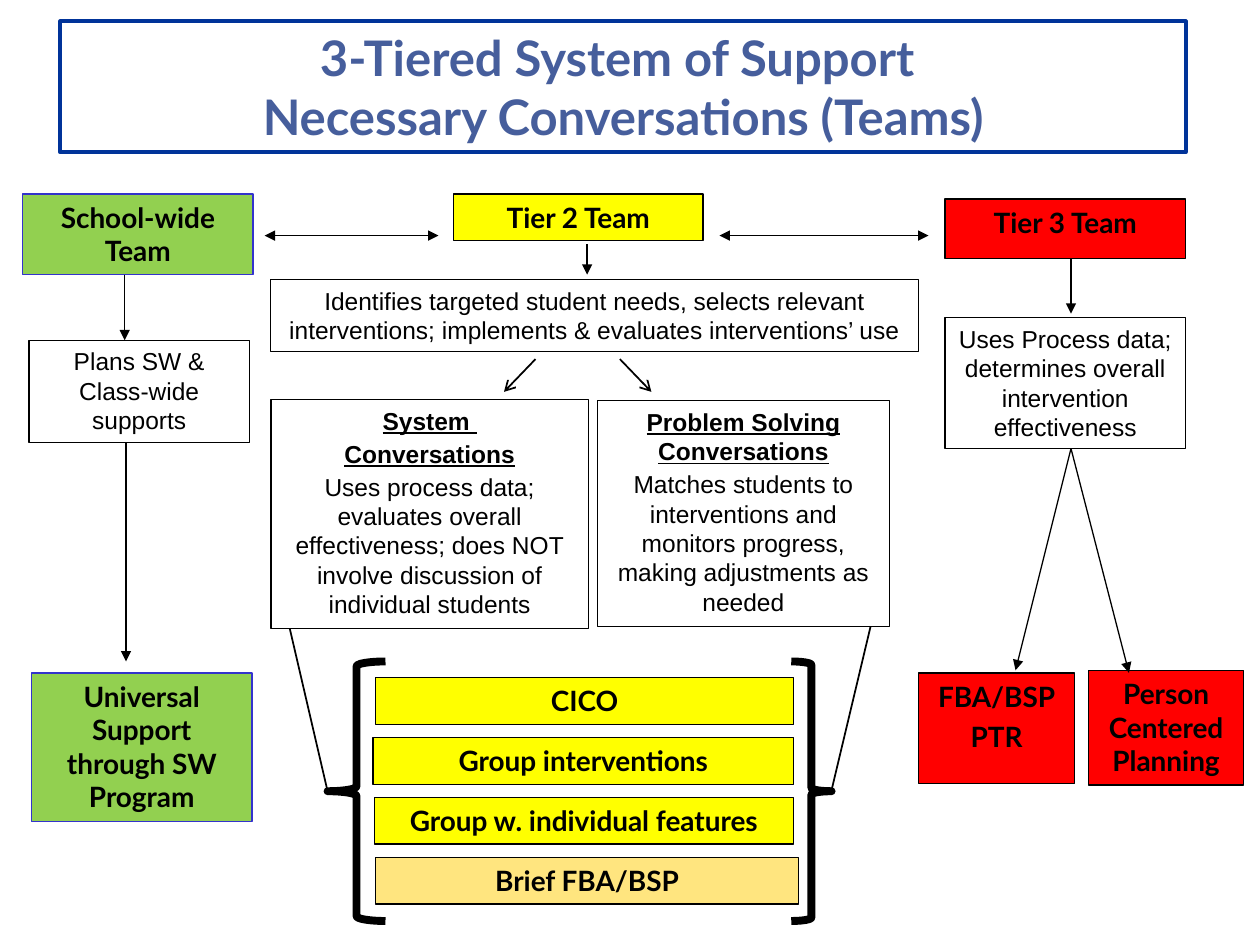
from lxml.etree import SubElement
from pptx import Presentation
from pptx.dml.color import RGBColor
from pptx.enum.shapes import MSO_CONNECTOR as LINK, MSO_SHAPE as SHAPE
from pptx.enum.text import MSO_ANCHOR as ANCHOR, PP_ALIGN as ALIGN
from pptx.oxml.ns import qn
from pptx.util import Inches, Pt

COLORS = {
    "white": "FFFFFF", "black": "000000", "navy": "003399", "title": "465E9C",
    "green": "92D050", "blue": "3333CC", "yellow": "FFFF00", "red": "FF0000",
    "gold": "FFCC00",
}
HEADING = {"name": "Lato", "size": Pt(16), "bold": True}
TITLE = {"name": "Lato", "size": Pt(28), "bold": True}
BODY = {"name": "Arial", "size": Pt(14), "bold": False}
TOPIC = {"name": "Arial", "size": Pt(14), "bold": True, "underline": True}


def color(name):
    return RGBColor.from_string(COLORS[name])


def add_box(place, fill, paragraphs, edge="black", weight=0.75, ink="black", gap=2):
    """Add a filled rectangle; paragraphs are (text, font format) pairs."""
    box = page.shapes.add_shape(SHAPE.RECTANGLE, *map(Inches, place))
    box.shadow.inherit = False
    box.fill.solid()
    box.fill.fore_color.rgb = color(fill)
    box.line.color.rgb = color(edge)
    box.line.width = Pt(weight)
    frame = box.text_frame
    frame.word_wrap = True
    frame.vertical_anchor = ANCHOR.TOP
    for index, (text, font_format) in enumerate(paragraphs):
        para = frame.add_paragraph() if index else frame.paragraphs[0]
        para.text = text
        para.alignment = ALIGN.CENTER
        para.space_before = Pt(gap if index else 0)
        for span in para.runs:
            span.font.color.rgb = color(ink)
            for name, value in font_format.items():
                setattr(span.font, name, value)
    return box


def add_line(start, end, weight=0.75, **arrows):
    """Add a black line; arrows maps headEnd or tailEnd to an arrow type."""
    line = page.shapes.add_connector(LINK.STRAIGHT, *map(Inches, start + end))
    line.line.color.rgb = color("black")
    line.line.width = Pt(weight)
    outline = line.line._get_or_add_ln()
    for tag in ("headEnd", "tailEnd"):
        if tag in arrows:
            SubElement(outline, qn(f"a:{tag}"), type=arrows[tag])
    SubElement(line._element.spPr, qn("a:effectLst"))


deck = Presentation()
deck.slide_width, deck.slide_height = Inches(10), Inches(7.5)
page = deck.slides.add_slide(deck.slide_layouts[6])

# Title
add_box((0.48, 0.17, 8.93, 1.04), "white",
        [("3-Tiered System of Support ", TITLE),
         ("Necessary Conversations (Teams)", TITLE)],
        edge="navy", weight=2.25, ink="title", gap=0)

# Teams and outcomes
for place, fill, edge, lines in [
    ((0.18, 1.54, 1.83, 0.64), "green", "blue", ["School-wide\vTeam"]),
    ((3.6, 1.54, 1.98, 0.37), "yellow", "black", ["Tier 2 Team"]),
    ((7.5, 1.58, 1.91, 0.47), "red", "black", ["Tier 3 Team"]),
    ((0.25, 5.34, 1.75, 1.18), "green", "blue",
     ["Universal Support through SW Program"]),
    ((7.29, 5.34, 1.24, 0.88), "red", "black", ["FBA/BSP", "PTR"]),
    ((8.64, 5.32, 1.23, 0.91), "red", "black", ["Person Centered Planning"]),
]:
    add_box(place, fill, [(text, HEADING) for text in lines], edge=edge, gap=4)

# Team tasks and conversations
for place, topics, task in [
    ((0.23, 2.7, 1.75, 0.81), [], "Plans SW & Class-wide supports"),
    ((2.15, 2.22, 5.14, 0.57), [],
     "Identifies targeted student needs, selects relevant interventions; "
     "implements & evaluates interventions’ use"),
    ((7.5, 2.52, 1.91, 1.04), [],
     "Uses Process data; determines overall intervention effectiveness"),
    ((2.15, 3.17, 2.52, 1.82), ["System ", "Conversations"],
     "Uses process data; evaluates overall effectiveness; does NOT involve "
     "discussion of individual students"),
    ((4.74, 3.18, 2.32, 1.79), ["Problem Solving Conversations"],
     "Matches students to interventions and monitors progress, making "
     "adjustments as needed"),
]:
    add_box(place, "white", [(topic, TOPIC) for topic in topics] + [(task, BODY)])

# Tier 2 interventions
for row, (text, left, width, fill) in enumerate([
    ("CICO", 2.98, 3.32, "yellow"),
    ("Group interventions", 2.96, 3.34, "yellow"),
    ("Group w. individual features", 2.97, 3.33, "yellow"),
    ("Brief FBA/BSP", 2.98, 3.36, "gold"),
]):
    box = add_box((left, 5.38 + 0.475 * row, width, 0.37), fill, [(text, HEADING)])
    if fill == "gold":
        tint = box._element.spPr.find(f"{qn('a:solidFill')}/{qn('a:srgbClr')}")
        SubElement(tint, qn("a:alpha"), val="50000")

# Braces around the interventions
for kind, left, width in [(SHAPE.LEFT_BRACE, 2.6, 0.46), (SHAPE.RIGHT_BRACE, 6.28, 0.32)]:
    brace = page.shapes.add_shape(kind, *map(Inches, (left, 5.25, width, 2.06)))
    brace.shadow.inherit = False
    brace.fill.background()
    brace.line.color.rgb = color("black")
    brace.line.width = Pt(4.5)

# Arrows between teams
for left, right in [(2.1, 3.48), (5.71, 7.37)]:
    add_line((left, 1.87), (right, 1.87), headEnd="triangle", tailEnd="triangle")

# Arrows from teams to tasks and outcomes
for start, end in [
    ((0.99, 2.18), (0.99, 2.7)),
    ((1, 3.51), (1, 5.25)),
    ((4.66, 1.94), (4.66, 2.18)),
    ((8.5, 2.05), (8.5, 2.49)),
    ((8.5, 3.56), (8.06, 5.32)),
    ((8.5, 3.56), (8.96, 5.34)),
]:
    add_line(start, end, tailEnd="triangle")

# Tier 2 branches to the conversations
for start, end in [((4.25, 2.85), (4, 3.11)), ((4.92, 2.85), (5.17, 3.11))]:
    add_line(start, end, weight=1, tailEnd="arrow")

# Lines from the conversations to the braces
for start, end in [((2.3, 4.99), (2.6, 6.28)), ((6.91, 4.97), (6.6, 6.27))]:
    add_line(start, end, weight=1)

deck.save("out.pptx")
